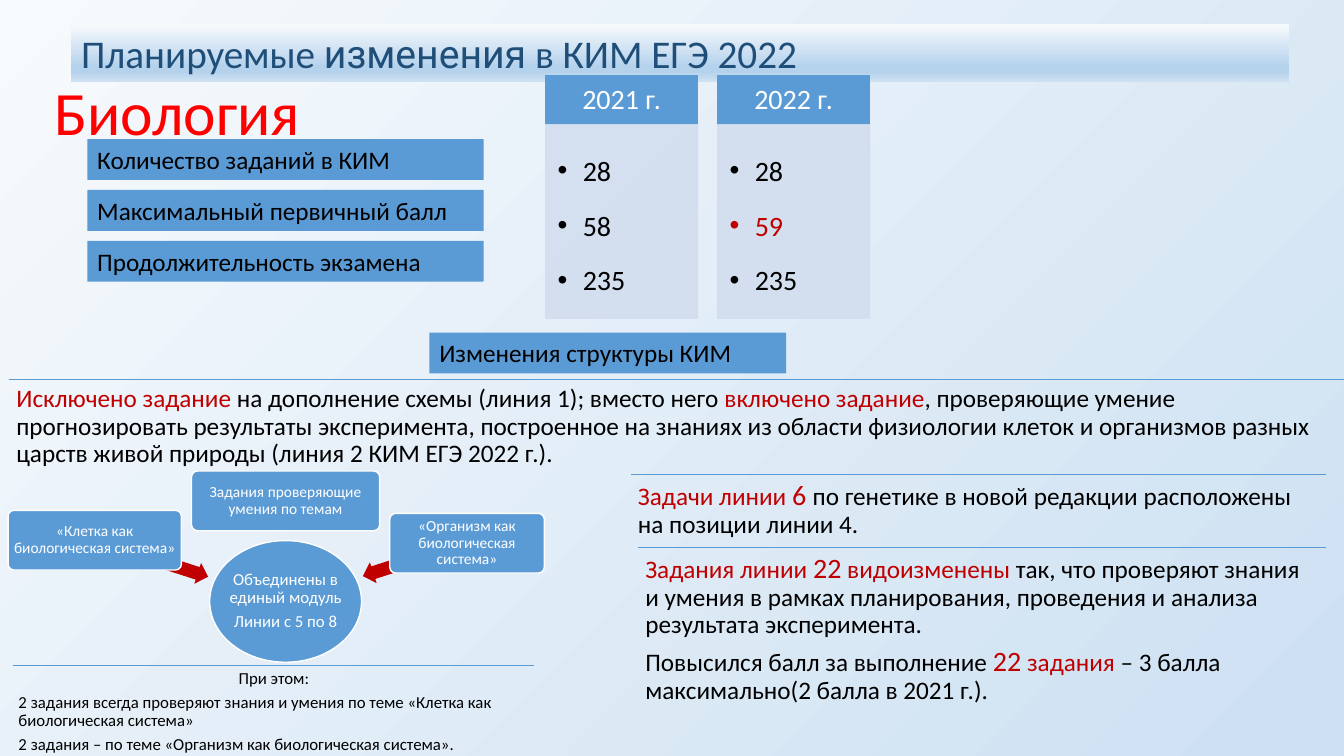
from lxml.etree import SubElement
from pptx import Presentation
from pptx.dml.color import RGBColor
from pptx.enum.shapes import MSO_CONNECTOR as CONN, MSO_SHAPE as SHAPE
from pptx.enum.text import MSO_ANCHOR as ANCHOR, PP_ALIGN as ALIGN
from pptx.oxml.ns import qn
from pptx.util import Inches, Pt

WIDTH, HEIGHT = Inches(13.333), Inches(7.5)
BLUE, PALE, RED, DARK_RED = "5B9BD5", "D2DEEF", "FF0000", "C00000"
BLACK, WHITE, NAVY = "000000", "FFFFFF", "1F4E79"
MIST, SKY, ICE = "F7FAFD", "CEE1F2", "B5D2EC"


def rgb(value):
    """Turn a hex string into a colour."""
    return RGBColor.from_string(value)


def place(x, y, w, h):
    """Turn percentages of the slide into left, top, width and height."""
    return (int(WIDTH * x / 100), int(HEIGHT * y / 100),
            int(WIDTH * w / 100), int(HEIGHT * h / 100))


def red(text, size=None):
    """Mark a run as dark red, optionally with its own size."""
    return text, {"color": DARK_RED, "size": size}


def gradient(owner, fill, stops, angle):
    """Fill with a linear gradient given as (percent, colour) stops."""
    fill.gradient()
    fill.gradient_angle = 360 - angle
    stop_list = next(owner.element.iter(qn("a:gsLst")))
    for stop in list(stop_list):
        stop_list.remove(stop)
    for position, color in stops:
        stop = SubElement(stop_list, qn("a:gs"), pos=str(position * 1000))
        SubElement(stop, qn("a:srgbClr"), val=color)


def add_bullet(p):
    """Give a paragraph a hanging round bullet."""
    pPr = p._p.get_or_add_pPr()
    pPr.set("marL", str(Pt(18)))
    pPr.set("indent", str(-Pt(18)))
    SubElement(pPr, qn("a:buFont"), typeface="Arial")
    SubElement(pPr, qn("a:buChar"), char="•")


def write(tf, paragraphs, size=18, color=BLACK, font="Calibri", align=ALIGN.LEFT,
          anchor=ANCHOR.TOP, spacing=0.9, after=0.35, insets=None, bullet=False):
    """Fill a text frame with paragraphs made of strings or (text, format) runs."""
    tf.word_wrap = True
    tf.vertical_anchor = anchor
    if insets:
        tf.margin_left, tf.margin_top, tf.margin_right, tf.margin_bottom = map(Pt, insets)
    for i, runs in enumerate(paragraphs):
        p = tf.add_paragraph() if i else tf.paragraphs[0]
        p.alignment, p.line_spacing = align, spacing
        p.space_before, p.space_after = Pt(0), Pt(size * after)
        if bullet:
            add_bullet(p)
        for run in runs:
            text, own = (run, {}) if isinstance(run, str) else run
            r = p.add_run()
            r.text = text
            r.font.size = Pt(own.get("size") or size)
            r.font.name = own.get("font", font)
            r.font.color.rgb = rgb(own.get("color", color))


def add_box(s, area, kind=SHAPE.RECTANGLE, fill=BLUE, line=None, opacity=None):
    """Add a preset shape without shadow."""
    sp = s.shapes.add_shape(kind, *place(*area))
    sp.shadow.inherit = False
    sp.fill.solid()
    sp.fill.fore_color.rgb = rgb(fill)
    if line:
        sp.line.color.rgb = rgb(line)
        sp.line.width = Pt(1)
    else:
        sp.line.fill.background()
    if opacity:
        for node in sp.element.spPr.iter(qn("a:srgbClr")):
            SubElement(node, qn("a:alpha"), val=str(opacity * 1000))
    return sp


def add_label(s, area, text):
    """Add a blue bar with a black caption."""
    write(add_box(s, area).text_frame, [[text]], spacing=1.0, after=0)


def add_year(s, left, year, values):
    """Add a year column: a header above a bulleted list."""
    head = add_box(s, (left, 10, 11.3, 6.5), line=BLUE)
    write(head.text_frame, [[year]], size=20, color=WHITE, align=ALIGN.CENTER,
          anchor=ANCHOR.MIDDLE, insets=(11.5, 6.5, 11.5, 6.5))
    body = add_box(s, (left, 16.5, 11.3, 25.6), fill=PALE, line=PALE, opacity=90)
    write(body.text_frame, [[v] for v in values], size=20, spacing=1.5, after=0.15,
          insets=(8.5, 8.5, 11.5, 12), bullet=True)


def add_text(s, area, paragraphs, **fmt):
    """Add a text box."""
    write(s.shapes.add_textbox(*place(*area)).text_frame, paragraphs, **fmt)


def add_divider(s, area):
    """Draw a thin line along the top edge of an area."""
    x, y, w, _ = place(*area)
    line = s.shapes.add_connector(CONN.STRAIGHT, x, y, x + w, y)
    line.line.color.rgb = rgb(BLUE)
    line.line.width = Pt(0.5)
    SubElement(line.element.spPr, qn("a:effectLst"))


def add_arrow(s, area, angle):
    """Add a red block arrow turned by an angle."""
    sp = add_box(s, area, SHAPE.LEFT_ARROW, fill=DARK_RED)
    sp.adjustments[0] = 0.6
    sp.rotation = angle


def add_topic(s, area, text):
    """Add a rounded topic box."""
    sp = add_box(s, area, SHAPE.ROUNDED_RECTANGLE, line=WHITE)
    sp.adjustments[0] = 0.1
    write(sp.text_frame, [[text]], size=11, color=WHITE, align=ALIGN.CENTER,
          anchor=ANCHOR.MIDDLE, insets=(0, 0, 0, 0))


def add_header(s):
    """Set the title and the banner above it."""
    title = s.shapes.title
    title.left, title.top, title.width, title.height = place(3.3, 10, 23.5, 10.5)
    write(title.text_frame, [["Биология"]], size=44, color=RED,
          anchor=ANCHOR.MIDDLE, after=0)
    banner = add_box(s, (5.3, 3.2, 90.6, 7.6))
    gradient(banner, banner.fill, [(0, MIST), (74, ICE), (83, ICE), (100, SKY)], 90)
    write(banner.text_frame,
          [["Планируемые ", ("изменения", {"font": "Roboto"}), " в КИМ ЕГЭ 2022"]],
          size=28, color=NAVY, spacing=1.0, after=0)


def add_module(s):
    """Draw the topics that merge into one module."""
    hub = (15.6, 71.5, 11.3, 16.1)
    add_box(s, hub, SHAPE.OVAL, line=WHITE)
    add_text(s, hub, [["Объединены в единый модуль"], ["Линии с 5 по 8"]], size=12,
             color=WHITE, align=ALIGN.CENTER, anchor=ANCHOR.MIDDLE, insets=(1, 1, 1, 1))
    add_arrow(s, (6.8, 72.4, 8.9, 2.9), 197.9)
    add_topic(s, (0.6, 67.5, 12.9, 7.9), "«Клетка как биологическая система»")
    add_topic(s, (14.25, 62.3, 14, 7.9), "Задания проверяющие умения по темам")
    add_arrow(s, (26.8, 72.5, 8.25, 2.9), 342.1)
    add_topic(s, (29, 67.9, 11.5, 7.9), "«Организм как биологическая система»")


def add_changes(s):
    """Add the ruled paragraphs about the changed tasks."""
    blocks = [
        ((0.7, 50.15, 99.3, 12.5), [
            [red("Исключено задание "), "на дополнение схемы (линия 1); вместо него ",
             red("включено задание"),
             ", проверяющие умение прогнозировать результаты эксперимента, построенное "
             "на знаниях из области физиологии клеток и организмов разных царств живой "
             "природы (линия 2 КИМ ЕГЭ 2022 г.)."]]),
        ((46.95, 62.8, 51.7, 9.7), [
            [red("Задачи линии "), red("6 ", 20),
             "по генетике в новой редакции расположены на позиции линии 4."]]),
        ((47.5, 72.4, 51.15, 27.6), [
            [red("Задания линии "), red("22", 20), red(" видоизменены "),
             "так, что проверяют знания и умения в рамках планирования, проведения "
             "и анализа результата эксперимента."],
            ["Повысился балл за выполнение ", red("22", 20), red(" задания "),
             "– 3 балла максимально(2 балла в 2021 г.)."]]),
    ]
    for area, paragraphs in blocks:
        add_divider(s, area)
        add_text(s, area, paragraphs, insets=(5, 5, 5, 5))


def add_note(s):
    """Add the ruled note under the module."""
    area = (1, 88, 38.75, 12)
    add_divider(s, area)
    add_text(s, area, [
        ["При этом:"],
        ["2 задания всегда проверяют знания и умения по теме «Клетка как "
         "биологическая система»"],
        ["2 задания – по теме «Организм как биологическая система»."],
    ], size=12, insets=(3.6, 3.6, 3.6, 3.6))
    s.shapes[-1].text_frame.paragraphs[0].alignment = ALIGN.CENTER


def main():
    """Build the slide and save it."""
    prs = Presentation()
    prs.slide_width, prs.slide_height = WIDTH, HEIGHT
    s = prs.slides.add_slide(prs.slide_layouts[5])
    gradient(s, s.background.fill, [(0, MIST), (97, SKY)], 45)
    add_header(s)
    labels = ["Количество заданий в КИМ", "Максимальный первичный балл",
              "Продолжительность экзамена"]
    for i, text in enumerate(labels):
        add_label(s, (6.5, 18.4 + 6.73 * i, 29.5, 5.4), text)
    add_year(s, 40.6, "2021 г.", ["28", "58", "235"])
    add_year(s, 53.4, "2022 г.", ["28", red("59"), "235"])
    add_label(s, (31.95, 44, 26.55, 5.4), "Изменения структуры КИМ")
    add_module(s)
    add_note(s)
    add_changes(s)
    prs.save("out.pptx")


if __name__ == "__main__":
    main()
